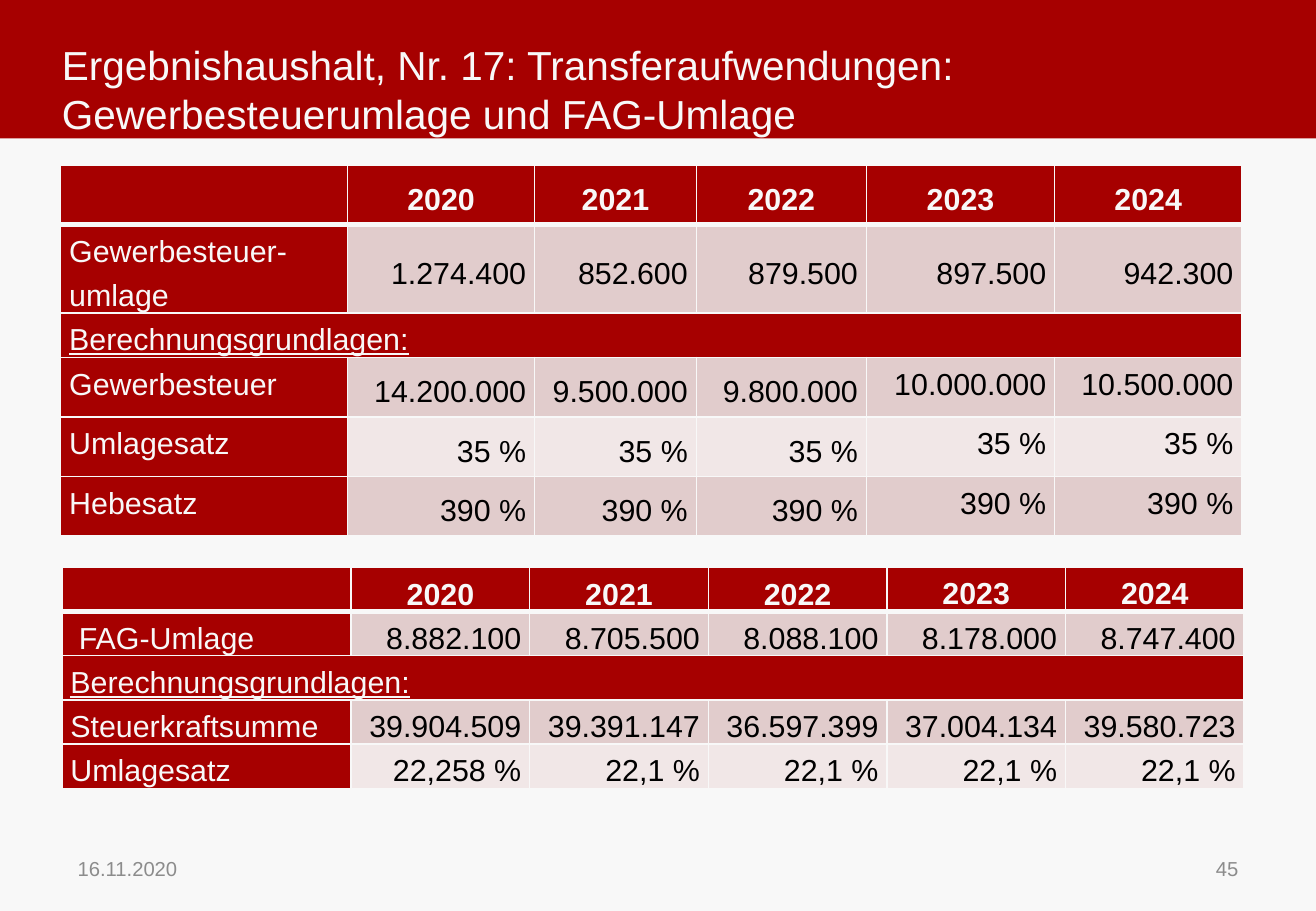
"""Build the slide on trade tax levy and FAG levy."""
from lxml import etree
from pptx import Presentation
from pptx import util as u
from pptx.dml.color import RGBColor
from pptx.enum import shapes, text
from pptx.oxml import ns

COLORS = {"red": "A60000", "light": "F8F8F8", "rose": "E1CCCC",
          "pale": "F1E7E7", "grey": "8C8C8C", "black": "000000"}
FONT = "Arial"
TITLE = "Ergebnishaushalt, Nr. 17: Transferaufwendungen: Gewerbesteuerumlage und FAG-Umlage"
YEARS = ["2020", "2021", "2022", "2023", "2024"]
HEADER = ("", YEARS, "red")
BASIS = ("Berechnungsgrundlagen:", [], "red")
TABLES = [
    {"at": (0.5, 1.36), "columns": [2.36, 1.54, 1.33, 1.4, 1.55, 1.54],
     "heights": [0.49, 0.72, 0.36, 0.49, 0.49, 0.49], "middle_rows": 2,
     "rows": [
         HEADER,
         ("Gewerbesteuer-\numlage", ["1.274.400", "852.600", "879.500", "897.500", "942.300"], "rose"),
         BASIS,
         ("Gewerbesteuer", ["14.200.000", "9.500.000", "9.800.000", "10.000.000", "10.500.000"], "rose"),
         ("Umlagesatz", ["35 %"] * 5, "pale"),
         ("Hebesatz", ["390 %"] * 5, "rose")]},
    {"at": (0.51, 4.67), "columns": [2.38] + [1.47] * 5,
     "heights": [0.36] * 5, "middle_rows": 0,
     "rows": [
         HEADER,
         (" FAG-Umlage", ["8.882.100", "8.705.500", "8.088.100", "8.178.000", "8.747.400"], "rose"),
         BASIS,
         ("Steuerkraftsumme", ["39.904.509", "39.391.147", "36.597.399", "37.004.134", "39.580.723"], "rose"),
         ("Umlagesatz", ["22,258 %"] + ["22,1 %"] * 4, "pale")]},
]
FOOTERS = [("16.11.2020", 0.54, "LEFT"), ("45", 7.76, "RIGHT")]


def color(name):
    return RGBColor.from_string(COLORS[name])


def write(frame, words, size, tint, align="LEFT", bold=False, underline=False, spacing=1.0):
    for index, line in enumerate(words.split("\n")):
        para = frame.add_paragraph() if index else frame.paragraphs[0]
        para.alignment = text.PP_ALIGN[align]
        para.line_spacing = spacing
        para.font.size = u.Pt(size)
        if line:
            span = para.add_run()
            span.text = line
            span.font.name, span.font.size = FONT, u.Pt(size)
            span.font.bold, span.font.underline = bold, underline
            span.font.color.rgb = color(tint)


def add_borders(cell, row):
    widths = {"L": 1, "R": 1, "T": 3 if row == 1 else 1, "B": 3 if row == 0 else 1}
    properties = cell._tc.get_or_add_tcPr()
    for index, (side, width) in enumerate(widths.items()):
        line = etree.Element(ns.qn("a:ln" + side), w=str(u.Pt(width)))
        fill = etree.SubElement(line, ns.qn("a:solidFill"))
        etree.SubElement(fill, ns.qn("a:srgbClr"), val=COLORS["light"])
        properties.insert(index, line)


def fill_cell(cell, row, column, words, tint, middle_rows):
    label = column == 0
    header = row == 0
    cell.fill.solid()
    cell.fill.fore_color.rgb = color("red" if label else tint)
    cell.margin_left = cell.margin_right = u.Inches(0.07)
    cell.margin_top = cell.margin_bottom = 0
    top = label or (column > 3 and row >= middle_rows)
    cell.vertical_anchor = text.MSO_ANCHOR.TOP if top else text.MSO_ANCHOR.MIDDLE
    align = "LEFT" if label else "CENTER" if header else "RIGHT"
    write(cell.text_frame, words, 18, "light" if label or header else "black",
          align, header, words == BASIS[0], 1.3)
    add_borders(cell, row)


def add_levy_table(page, data):
    columns, heights = data["columns"], data["heights"]
    box = [u.Inches(v) for v in (*data["at"], sum(columns), sum(heights))]
    table = page.shapes.add_table(len(heights), len(columns), *box).table
    for column, width in zip(table.columns, columns):
        column.width = u.Inches(width)
    for row, (label, values, tint) in enumerate(data["rows"]):
        table.rows[row].height = u.Inches(heights[row])
        if not values:
            table.cell(row, 0).merge(table.cell(row, len(YEARS)))
        for column, words in enumerate([label] + (values or [""] * len(YEARS))):
            fill_cell(table.cell(row, column), row, column, words, tint, data["middle_rows"])


def add_title(page):
    title = page.shapes.title
    title.left, title.top, title.width, title.height = map(u.Inches, (0.51, 0.36, 8.32, 0.74))
    frame = title.text_frame
    frame.margin_left = frame.margin_right = frame.margin_top = frame.margin_bottom = 0
    frame.word_wrap = True
    frame.auto_size = text.MSO_AUTO_SIZE.NONE
    frame.vertical_anchor = text.MSO_ANCHOR.MIDDLE
    write(frame, TITLE, 24, "light")
    band = page.shapes.add_shape(shapes.MSO_SHAPE.RECTANGLE, 0, 0, u.Inches(10.83), u.Inches(1.14))
    band.shadow.inherit = False
    band.fill.solid()
    band.fill.fore_color.rgb = color("red")
    band.line.fill.background()
    title.element.addprevious(band.element)


def main():
    deck = Presentation()
    deck.slide_width, deck.slide_height = u.Inches(10.83), u.Inches(7.5)
    page = deck.slides.add_slide(deck.slide_layouts[5])
    page.background.fill.solid()
    page.background.fill.fore_color.rgb = color("light")
    add_title(page)
    for data in TABLES:
        add_levy_table(page, data)
    for words, left, align in FOOTERS:
        box = page.shapes.add_textbox(*map(u.Inches, (left, 6.95, 2.53, 0.4)))
        box.text_frame.word_wrap = True
        box.text_frame.vertical_anchor = text.MSO_ANCHOR.MIDDLE
        write(box.text_frame, words, 12, "grey", align)
    deck.save("out.pptx")


if __name__ == "__main__":
    main()
